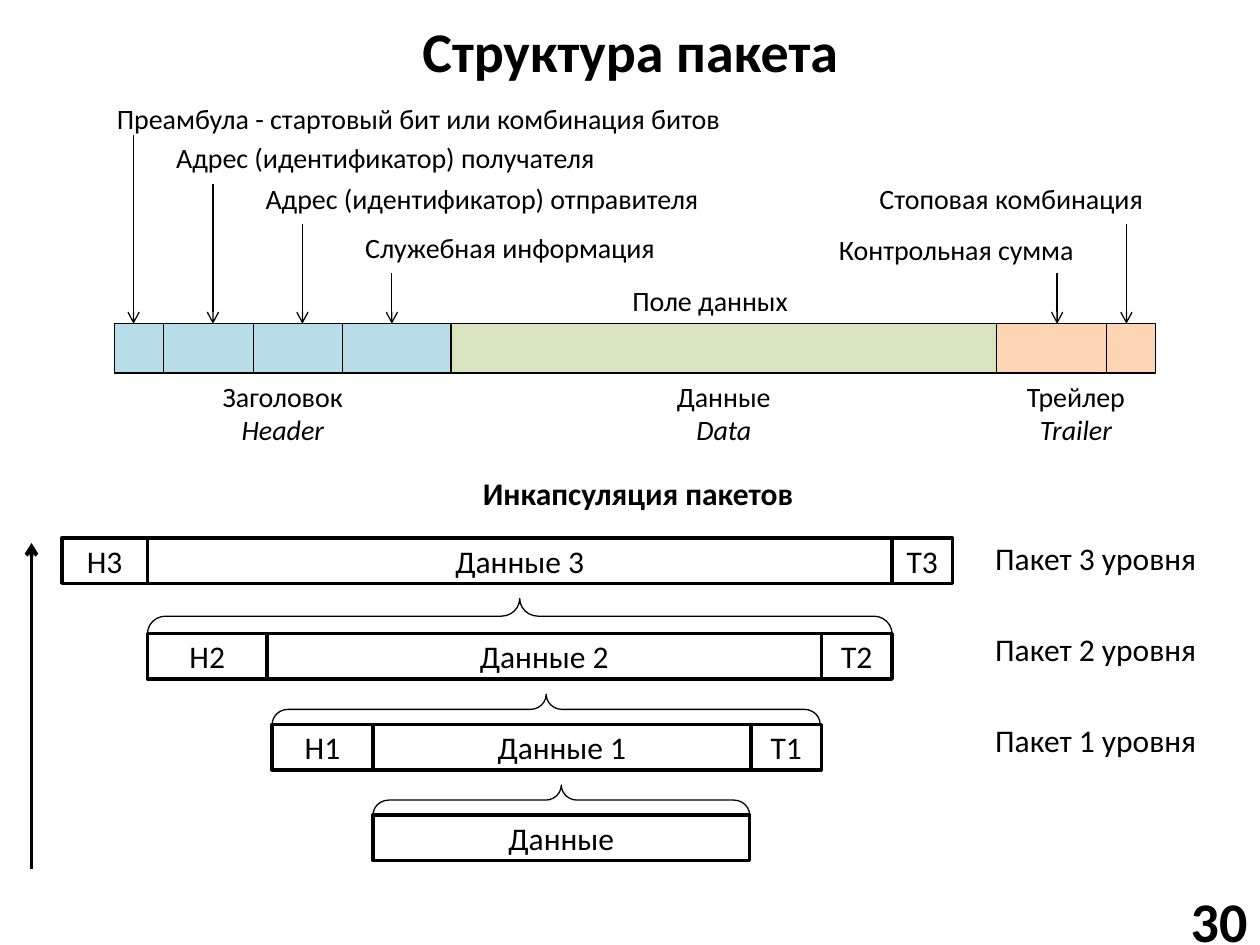
from itertools import pairwise

from pptx import Presentation
from pptx.dml.color import RGBColor
from pptx.enum.shapes import MSO_CONNECTOR, MSO_SHAPE
from pptx.enum.text import MSO_ANCHOR as Anchor, PP_ALIGN as Align
from pptx.oxml.ns import qn
from pptx.util import Inches, Pt
from lxml.etree import SubElement

FONT = "Calibri"
BLACK, WHITE = "000000", "FFFFFF"
BLUE, GREEN, ORANGE = "B7DEE8", "D7E4BD", "FCD5B5"

# Packet strip: field edges and the colour of each field
STRIP_TOP, STRIP_HEIGHT = 2.57, 0.39
FIELD_EDGES = [0.91, 1.3, 2.01, 2.72, 3.58, 7.91, 8.78, 9.17]
FIELD_COLORS = [BLUE] * 4 + [GREEN] + [ORANGE] * 2

# Parts of the packet: name, English name, first and last edge
PARTS = [("Заголовок", "Header", 0, 4),
         ("Данные", "Data", 4, 5),
         ("Трейлер", "Trailer", 5, 7)]

# Field captions: text, left, top, width, alignment
CAPTIONS = [
    ("Преамбула - стартовый бит или комбинация битов", 0.83, 0.76, 5.04, Align.LEFT),
    ("Адрес (идентификатор) получателя", 1.3, 1.07, 5.04, Align.LEFT),
    ("Адрес (идентификатор) отправителя", 2.01, 1.39, 5.04, Align.LEFT),
    ("Служебная информация", 2.8, 1.78, 3.07, Align.LEFT),
    ("Поле данных", 4.92, 2.2, 1.73, Align.LEFT),
    ("Контрольная сумма", 6.42, 1.8, 2.2, Align.RIGHT),
    ("Стоповая комбинация", 6.65, 1.39, 2.52, Align.RIGHT),
]
# Arrows from captions down to the strip: x, start y
POINTERS = [(1.06, 1.07), (1.69, 1.46), (2.4, 1.78), (3.11, 2.17),
            (8.39, 2.17), (8.94, 1.78)]

# Encapsulation levels: level, top, edges of header, data and trailer
LEVELS = [(3, 4.27, [0.49, 1.17, 7.08, 7.56]),
          (2, 5.03, [1.17, 2.12, 6.52, 7.08]),
          (1, 5.75, [2.16, 2.96, 5.96, 6.52])]
ROW_HEIGHT = 0.36
PAYLOAD_LEFT, PAYLOAD_TOP, PAYLOAD_WIDTH = 2.96, 6.47, 2.99
# Braces above the inner rows: left, bottom, length, depth
BRACES = [(1.17, 5.03, 5.91, 0.28),
          (2.16, 5.75, 4.35, 0.24),
          (2.96, 6.47, 2.99, 0.24)]


def color(hex_code):
    return RGBColor.from_string(hex_code)


def format_text(frame, size, align, bold=False):
    for para in frame.paragraphs:
        para.alignment = align
        for span in para.runs:
            font = span.font
            font.name, font.size, font.bold = FONT, Pt(size), bold
            font.color.rgb = color(BLACK)


def add_text(page, text, left, top, width, height, size=16,
             align=Align.LEFT, bold=False, anchor=Anchor.TOP):
    box = page.shapes.add_textbox(*map(Inches, (left, top, width, height)))
    frame = box.text_frame
    frame.word_wrap = True
    frame.vertical_anchor = anchor
    frame.text = text
    format_text(frame, size, align, bold)
    return frame


def add_box(page, left, top, width, height, fill, line_width, text=""):
    box = page.shapes.add_shape(
        MSO_SHAPE.RECTANGLE, *map(Inches, (left, top, width, height)))
    box.shadow.inherit = False
    box.fill.solid()
    box.fill.fore_color.rgb = color(fill)
    box.line.color.rgb = color(BLACK)
    box.line.width = Pt(line_width)
    if text:
        frame = box.text_frame
        frame.text = text
        frame.vertical_anchor = Anchor.MIDDLE
        format_text(frame, 18, Align.CENTER)


def add_arrow(page, x, start, end, line_width=0.75):
    arrow = page.shapes.add_connector(
        MSO_CONNECTOR.STRAIGHT, *map(Inches, (x, start, x, end)))
    arrow.line.color.rgb = color(BLACK)
    arrow.line.width = Pt(line_width)
    SubElement(arrow.line._get_or_add_ln(), qn("a:tailEnd"), type="arrow")
    SubElement(arrow._element.spPr, qn("a:effectLst"))


def add_brace(page, left, bottom, length, depth):
    # The brace is turned about its centre so that its tip points up
    center_x, center_y = left + length / 2, bottom - depth / 2
    brace = page.shapes.add_shape(
        MSO_SHAPE.RIGHT_BRACE, Inches(center_x - depth / 2),
        Inches(center_y - length / 2), Inches(depth), Inches(length))
    brace.rotation = 270
    brace.adjustments[0] = 0.52
    brace.shadow.inherit = False
    brace.fill.background()
    brace.line.color.rgb = color(BLACK)
    brace.line.width = Pt(0.75)


def set_title(page, text):
    title = page.shapes.title
    title.left, title.top, title.width, title.height = map(
        Inches, (0.28, 0.05, 9.45, 0.69))
    title.text_frame.text = text
    title.text_frame.vertical_anchor = Anchor.MIDDLE
    format_text(title.text_frame, 32, Align.CENTER, bold=True)


def draw_packet(page):
    for (left, right), fill in zip(pairwise(FIELD_EDGES), FIELD_COLORS):
        add_box(page, left, STRIP_TOP, right - left, STRIP_HEIGHT, fill, 0.75)
    for name, english, first, last in PARTS:
        left, right = FIELD_EDGES[first], FIELD_EDGES[last]
        frame = add_text(page, f"{name}\n{english}", left,
                         STRIP_TOP + STRIP_HEIGHT, right - left, 0.64,
                         align=Align.CENTER)
        frame.paragraphs[1].runs[0].font.italic = True
    for text, left, top, width, align in CAPTIONS:
        add_text(page, text, left, top, width, 0.37, align=align)
    for x, start in POINTERS:
        add_arrow(page, x, start, STRIP_TOP)


def draw_encapsulation(page):
    add_text(page, "Инкапсуляция пакетов", 0.93, 3.71, 8.27, 0.4,
             size=18, align=Align.CENTER, bold=True)
    add_box(page, PAYLOAD_LEFT, PAYLOAD_TOP, PAYLOAD_WIDTH, ROW_HEIGHT,
            WHITE, 2, "Данные")
    for level, top, edges in reversed(LEVELS):
        names = (f"H{level}", f"Данные {level}", f"T{level}")
        for (left, right), name in zip(pairwise(edges), names):
            add_box(page, left, top, right - left, ROW_HEIGHT, WHITE, 2, name)
        # Level labels keep an even step, up from level 1
        add_text(page, f"Пакет {level} уровня", 7.8,
                 5.67 - 0.72 * (level - 1), 1.92, 0.4, size=18)
    for brace in BRACES:
        add_brace(page, *brace)
    add_arrow(page, 0.25, 6.9, 4.31, line_width=2.25)


def main():
    deck = Presentation()
    deck.slide_width, deck.slide_height = Inches(10), Inches(7.5)
    page = deck.slides.add_slide(deck.slide_layouts[5])
    set_title(page, "Структура пакета")
    draw_packet(page)
    draw_encapsulation(page)
    # Slide number
    add_text(page, "30", 8.86, 7.1, 1.14, 0.4, size=32,
             align=Align.RIGHT, bold=True, anchor=Anchor.MIDDLE)
    deck.save("out.pptx")


if __name__ == "__main__":
    main()
